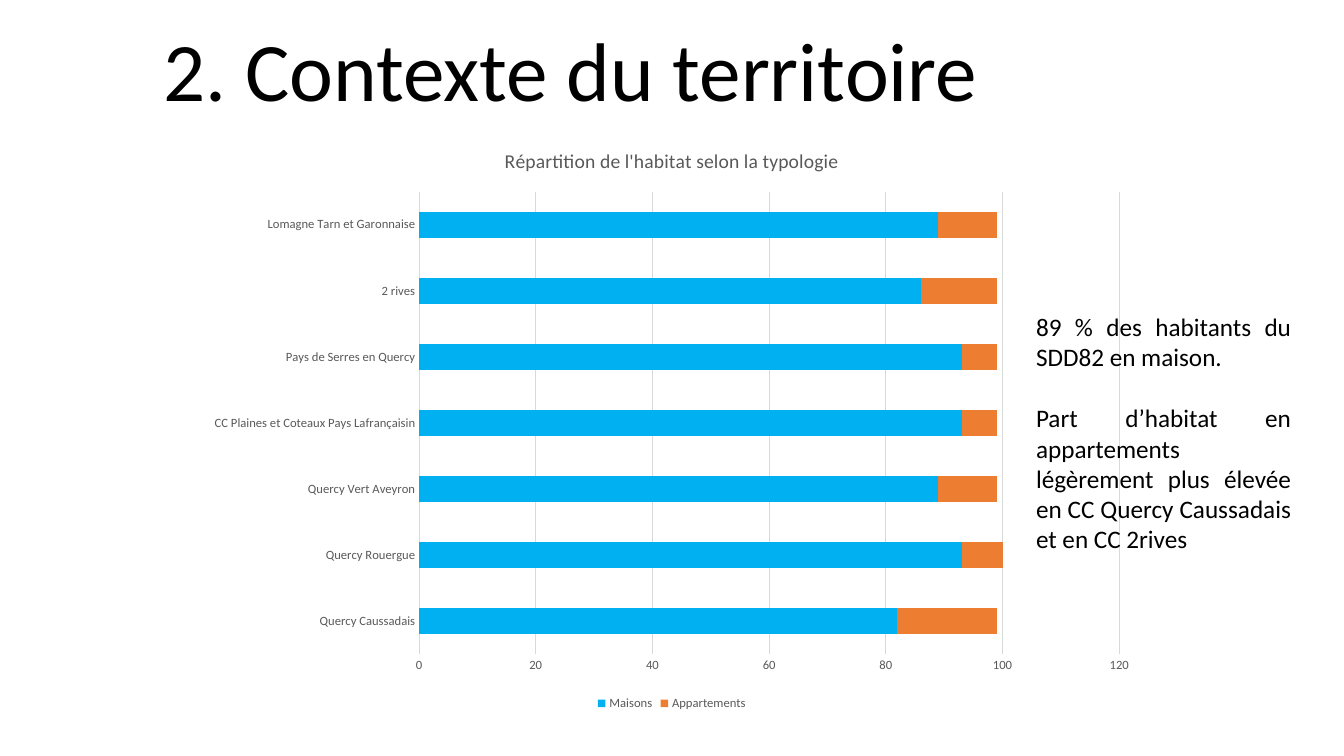
from dataclasses import dataclass

import pptx
import pptx.chart.data
import pptx.dml.color
import pptx.enum.chart
import pptx.enum.text
import pptx.util
from pptx.util import Cm

RGB = pptx.dml.color.RGBColor
BLACK = RGB(0x00, 0x00, 0x00)
GREY = RGB(0x59, 0x59, 0x59)
PALE = RGB(0xD9, 0xD9, 0xD9)
BLUE = RGB(0x00, 0xB0, 0xF0)
ORANGE = RGB(0xED, 0x7D, 0x31)
FACE = "Calibri"
ALIGN = pptx.enum.text.PP_ALIGN


@dataclass
class Box:
    left: float
    top: float
    width: float
    height: float

    def size(self) -> tuple:
        return Cm(self.left), Cm(self.top), Cm(self.width), Cm(self.height)


@dataclass
class Series:
    name: str
    color: RGB
    values: tuple


HEAD = Box(3.86, 0.56, 21.67, 2.64)
PLOT = Box(4.93, 3.2, 24, 14.81)
NOTE = Box(25.86, 7.72, 6.93, 6.4)

AREAS = (
    "Quercy Caussadais",
    "Quercy Rouergue",
    "Quercy Vert Aveyron",
    "CC Plaines et Coteaux Pays Lafrançaisin",
    "Pays de Serres en Quercy",
    "2 rives",
    "Lomagne Tarn et Garonnaise",
)
HOMES = (
    Series("Maisons", BLUE, (82, 93, 89, 93, 93, 86, 89)),
    Series("Appartements", ORANGE, (17, 7, 10, 6, 6, 13, 10)),
)
NOTES = (
    "89 % des habitants du SDD82 en maison.",
    "Part d’habitat en appartements légèrement plus élevée "
    "en CC Quercy Caussadais et en CC 2rives",
)


def style(font, size: float, color: RGB) -> None:
    font.name = FACE
    font.size = pptx.util.Pt(size)
    font.bold = False
    font.color.rgb = color


def write(par, text: str, *, size: float, color: RGB = BLACK,
          align=None, line=None, before=None) -> None:
    run = par.add_run()
    run.text = text
    style(run.font, size, color)
    par.alignment = align
    par.line_spacing = line
    if before:
        par.space_before = pptx.util.Pt(before)


def rule(line) -> None:
    line.color.rgb = PALE
    line.width = pptx.util.Pt(0.75)


def add_title(slide) -> None:
    title = slide.shapes.title
    title.left, title.top, title.width, title.height = HEAD.size()
    frame = title.text_frame
    frame.auto_size = pptx.enum.text.MSO_AUTO_SIZE.NONE
    frame.vertical_anchor = pptx.enum.text.MSO_ANCHOR.MIDDLE
    write(frame.paragraphs[0], "2. Contexte du territoire",
          size=59.4, align=ALIGN.LEFT, line=0.9)


def add_plot(slide) -> None:
    kinds = pptx.enum.chart
    data = pptx.chart.data.CategoryChartData()
    data.categories = AREAS
    for item in HOMES:
        data.add_series(item.name, item.values)
    chart = slide.shapes.add_chart(
        kinds.XL_CHART_TYPE.BAR_STACKED, *PLOT.size(), data).chart
    style(chart.font, 10, BLACK)

    # Heading and legend
    chart.has_title = True
    write(chart.chart_title.text_frame.paragraphs[0],
          "Répartition de l'habitat selon la typologie", size=14, color=GREY)
    chart.chart_title.include_in_layout = False
    chart.has_legend = True
    chart.legend.position = kinds.XL_LEGEND_POSITION.BOTTOM
    chart.legend.include_in_layout = False
    style(chart.legend.font, 9, GREY)

    # Axes
    for axis in (chart.category_axis, chart.value_axis):
        axis.major_tick_mark = kinds.XL_TICK_MARK.NONE
        axis.minor_tick_mark = kinds.XL_TICK_MARK.NONE
        style(axis.tick_labels.font, 9, GREY)
    rule(chart.category_axis.format.line)
    scale = chart.value_axis
    scale.minimum_scale, scale.maximum_scale, scale.major_unit = 0, 120, 20
    scale.format.line.fill.background()
    scale.has_major_gridlines = True
    rule(scale.major_gridlines.format.line)

    # Bars
    plot = chart.plots[0]
    plot.gap_width = 150
    plot.overlap = 100
    plot.vary_by_categories = False
    for bars, item in zip(plot.series, HOMES):
        bars.format.fill.solid()
        bars.format.fill.fore_color.rgb = item.color


def add_note(slide) -> None:
    frame = slide.shapes.add_textbox(*NOTE.size()).text_frame
    frame.word_wrap = True
    frame.auto_size = pptx.enum.text.MSO_AUTO_SIZE.SHAPE_TO_FIT_TEXT
    for rank, text in enumerate(NOTES):
        par = frame.add_paragraph() if rank else frame.paragraphs[0]
        write(par, text, size=18, align=ALIGN.JUSTIFY,
              before=22 if rank else None)


def main() -> None:
    deck = pptx.Presentation()
    deck.slide_width, deck.slide_height = Cm(33.87), Cm(19.05)
    slide = deck.slides.add_slide(deck.slide_layouts.get_by_name("Title Only"))
    add_title(slide)
    add_plot(slide)
    add_note(slide)
    deck.save("out.pptx")


if __name__ == "__main__":
    main()
